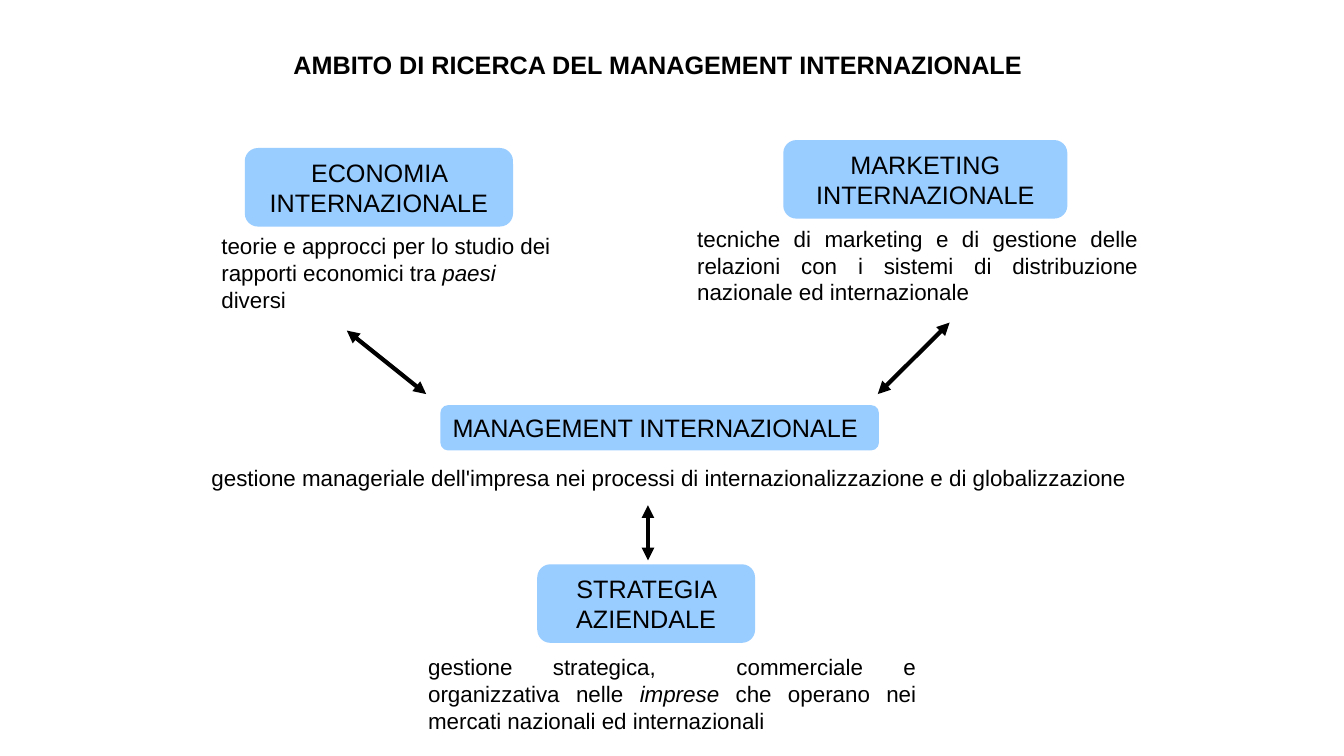
from dataclasses import dataclass

from lxml import etree
from pptx import Presentation
from pptx.dml.color import RGBColor
from pptx.enum.shapes import MSO_CONNECTOR, MSO_SHAPE
from pptx.enum.text import MSO_ANCHOR, PP_ALIGN
from pptx.oxml.ns import qn
from pptx.util import Cm, Pt

LEFT, CENTER, JUSTIFY = PP_ALIGN.LEFT, PP_ALIGN.CENTER, PP_ALIGN.JUSTIFY
TOP, MIDDLE = MSO_ANCHOR.TOP, MSO_ANCHOR.MIDDLE
ROUNDED = MSO_SHAPE.ROUNDED_RECTANGLE
STRAIGHT = MSO_CONNECTOR.STRAIGHT

# Boxes are (left, top, width, height) in cm
TITLE = "AMBITO DI RICERCA DEL MANAGEMENT INTERNAZIONALE"
TITLE_BOX = (7.14, 1.12, 19.81, 1.02)

# Each field: name, its box and alignment; description as (text, italic) runs, its box and alignment
FIELDS = [
    ("ECONOMIA INTERNAZIONALE", (6.17, 3.73, 6.76, 1.98), CENTER,
     [("teorie e approcci per lo studio dei rapporti economici tra ", False),
      ("paesi ", True), ("diversi", False)],
     (5.33, 5.72, 9.02, 2.29), LEFT),
    ("MARKETING INTERNAZIONALE", (19.74, 3.53, 7.16, 1.98), CENTER,
     [("tecniche di marketing e di gestione delle relazioni con i sistemi "
       "di distribuzione nazionale ed internazionale", False)],
     (17.32, 5.54, 11.61, 2.29), JUSTIFY),
    ("MANAGEMENT INTERNAZIONALE", (11.1, 10.21, 11.05, 1.14), LEFT,
     [("gestione manageriale dell'impresa nei processi di "
       "internazionalizzazione e di globalizzazione", False)],
     (5.08, 11.58, 23.9, 0.94), LEFT),
    ("STRATEGIA AZIENDALE", (13.54, 14.22, 5.49, 1.98), CENTER,
     [("gestione strategica,  commerciale e organizzativa nelle ", False),
      ("imprese", True),
      (" che operano nei mercati nazionali ed internazionali", False)],
     (10.54, 16.33, 12.8, 2.29), JUSTIFY),
]

# Arrows: x1, y1, x2, y2 in cm
ARROWS = [
    (8.74, 8.33, 10.74, 9.93),
    (22.12, 9.93, 23.93, 8.13),
    (16.33, 12.73, 16.33, 14.12),
]


@dataclass(frozen=True)
class Theme:
    font: str = "Arial"
    heading: Pt = Pt(18)
    body: Pt = Pt(16)
    line: Pt = Pt(3)
    ink: RGBColor = RGBColor(0x00, 0x00, 0x00)
    field: RGBColor = RGBColor(0x99, 0xCC, 0xFF)


THEME = Theme()


def cm(values):
    return [Cm(v) for v in values]


def write(shape, runs, size, align, anchor, bold=False):
    """Fill the shape with one paragraph of (text, italic) runs."""
    tf = shape.text_frame
    tf.word_wrap = True
    tf.vertical_anchor = anchor
    p = tf.paragraphs[0]
    p.alignment = align
    for text, italic in runs:
        r = p.add_run()
        r.text = text
        r.font.name = THEME.font
        r.font.size = size
        r.font.bold = bold
        r.font.italic = italic
        r.font.color.rgb = THEME.ink


def add_title(s):
    title = s.shapes.title
    title.left, title.top, title.width, title.height = cm(TITLE_BOX)
    write(title, [(TITLE, False)], THEME.heading, LEFT, TOP, bold=True)


def add_field(s, name, box, align, description, text_box, text_align):
    sp = s.shapes.add_shape(ROUNDED, *cm(box))
    sp.shadow.inherit = False
    sp.fill.solid()
    sp.fill.fore_color.rgb = THEME.field
    sp.line.fill.background()
    write(sp, [(name, False)], THEME.heading, align, MIDDLE)

    tb = s.shapes.add_textbox(*cm(text_box))
    write(tb, description, THEME.body, text_align, TOP)


def add_double_arrow(s, ends):
    c = s.shapes.add_connector(STRAIGHT, *cm(ends))
    c.line.color.rgb = THEME.ink
    c.line.width = THEME.line
    ln = c.line._get_or_add_ln()
    for end in ("a:headEnd", "a:tailEnd"):
        etree.SubElement(ln, qn(end), type="triangle")
    etree.SubElement(c._element.spPr, qn("a:effectLst"))


def main():
    prs = Presentation()
    prs.slide_width, prs.slide_height = Cm(33.87), Cm(19.05)
    s = prs.slides.add_slide(prs.slide_layouts[5])
    add_title(s)
    for field in FIELDS:
        add_field(s, *field)
    for ends in ARROWS:
        add_double_arrow(s, ends)
    prs.save("out.pptx")


if __name__ == "__main__":
    main()
